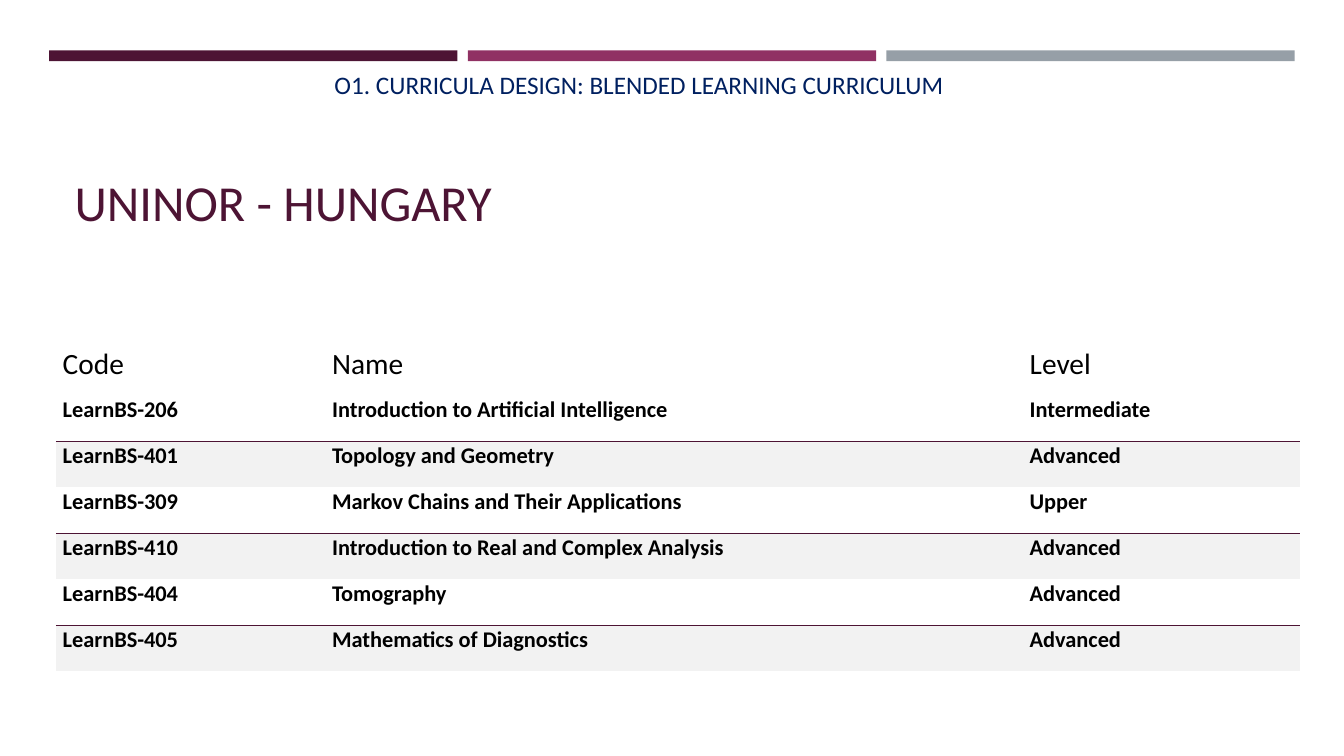
from lxml.etree import SubElement
from pptx import Presentation
from pptx.dml.color import RGBColor
from pptx.enum.shapes import MSO_SHAPE
from pptx.enum.text import MSO_ANCHOR
from pptx.oxml.ns import qn
from pptx.util import Cm, Pt

COLORS = {
    "plum": "4D1434",
    "magenta": "903163",
    "gray": "969FA7",
    "navy": "002060",
    "black": "000000",
    "band": "F2F2F2",
}

COURSES = [
    ("Code", "Name", "Level"),
    ("LearnBS-206", "Introduction to Artificial Intelligence", "Intermediate"),
    ("LearnBS-401", "Topology and Geometry", "Advanced"),
    ("LearnBS-309", "Markov Chains and Their Applications", "Upper"),
    ("LearnBS-410", "Introduction to Real and Complex Analysis", "Advanced"),
    ("LearnBS-404", "Tomography", "Advanced"),
    ("LearnBS-405", "Mathematics of Diagnostics", "Advanced"),
]


class SlideBuilder:
    font_name = "Calibri"

    def __init__(self, slide):
        self.slide = slide

    def color(self, name):
        return RGBColor.from_string(COLORS[name])

    def format_text(self, paragraph, size, color, bold=False):
        for run in paragraph.runs:
            run.font.name = self.font_name
            run.font.size = Pt(size)
            run.font.bold = bold
            run.font.color.rgb = self.color(color)

    def bar(self, left, top, width, height, color):
        shape = self.slide.shapes.add_shape(
            MSO_SHAPE.RECTANGLE, Cm(left), Cm(top), Cm(width), Cm(height))
        shape.shadow.inherit = False
        shape.fill.solid()
        shape.fill.fore_color.rgb = self.color(color)
        shape.line.fill.background()

    def text(self, left, top, width, height, text, size, color,
             anchor=MSO_ANCHOR.TOP, line_spacing=1.0):
        box = self.slide.shapes.add_textbox(Cm(left), Cm(top), Cm(width), Cm(height))
        text_frame = box.text_frame
        text_frame.word_wrap = True
        text_frame.vertical_anchor = anchor
        text_frame.text = text
        paragraph = text_frame.paragraphs[0]
        paragraph.space_after = Pt(6)
        paragraph.line_spacing = line_spacing
        self.format_text(paragraph, size, color)

    def borders(self, cell, ruled_side):
        properties = cell._tc.get_or_add_tcPr()
        for side in ("lnL", "lnR", "lnT", "lnB"):
            line = SubElement(properties, qn(f"a:{side}"), w=str(Pt(1)))
            if side == ruled_side:
                fill = SubElement(line, qn("a:solidFill"))
                SubElement(fill, qn("a:srgbClr"), val=COLORS["plum"])
            else:
                SubElement(line, qn("a:noFill"))

    def cell(self, cell, text, row):
        header = row == 0
        banded = not header and row % 2 == 0
        cell.text = text
        cell.margin_left = cell.margin_right = Cm(0.17)
        cell.margin_top, cell.margin_bottom = Cm(0.02), Cm(0.33)
        cell.vertical_anchor = MSO_ANCHOR.BOTTOM if header else MSO_ANCHOR.TOP
        self.format_text(cell.text_frame.paragraphs[0],
                         21 if header else 16, "black", bold=not header)
        self.borders(cell, None if header else "lnT" if banded else "lnB")
        if banded:
            cell.fill.solid()
            cell.fill.fore_color.rgb = self.color("band")
        else:
            cell.fill.background()

    def table(self, left, top, widths, header_height, row_height, rows):
        height = header_height + row_height * (len(rows) - 1)
        table = self.slide.shapes.add_table(
            len(rows), len(widths), Cm(left), Cm(top),
            Cm(sum(widths)), Cm(height)).table
        for column, width in zip(table.columns, widths):
            column.width = Cm(width)
        for index, values in enumerate(rows):
            table.rows[index].height = Cm(row_height if index else header_height)
            for column, value in enumerate(values):
                self.cell(table.cell(index, column), value, index)


def main():
    presentation = Presentation()
    presentation.slide_width = Cm(33.87)
    presentation.slide_height = Cm(19.05)
    slide = presentation.slides.add_slide(presentation.slide_layouts[6])
    builder = SlideBuilder(slide)

    for index, color in enumerate(("plum", "magenta", "gray")):
        builder.bar(1.24 + index * 10.55, 1.27, 10.29, 0.27, color)
    builder.text(1.63, 2.01, 30.53, 3.96, "UNINOR - HUNGARY", 36, "plum",
                 anchor=MSO_ANCHOR.BOTTOM)
    builder.table(1.41, 8.59, (6.79, 17.58, 6.97), 1.37, 1.16, COURSES)
    builder.text(8.18, 1.7, 18.34, 0.94,
                 "O1. CURRICULA DESIGN: BLENDED LEARNING CURRICULUM",
                 18, "navy", line_spacing=0.9)

    presentation.save("out.pptx")


if __name__ == "__main__":
    main()
